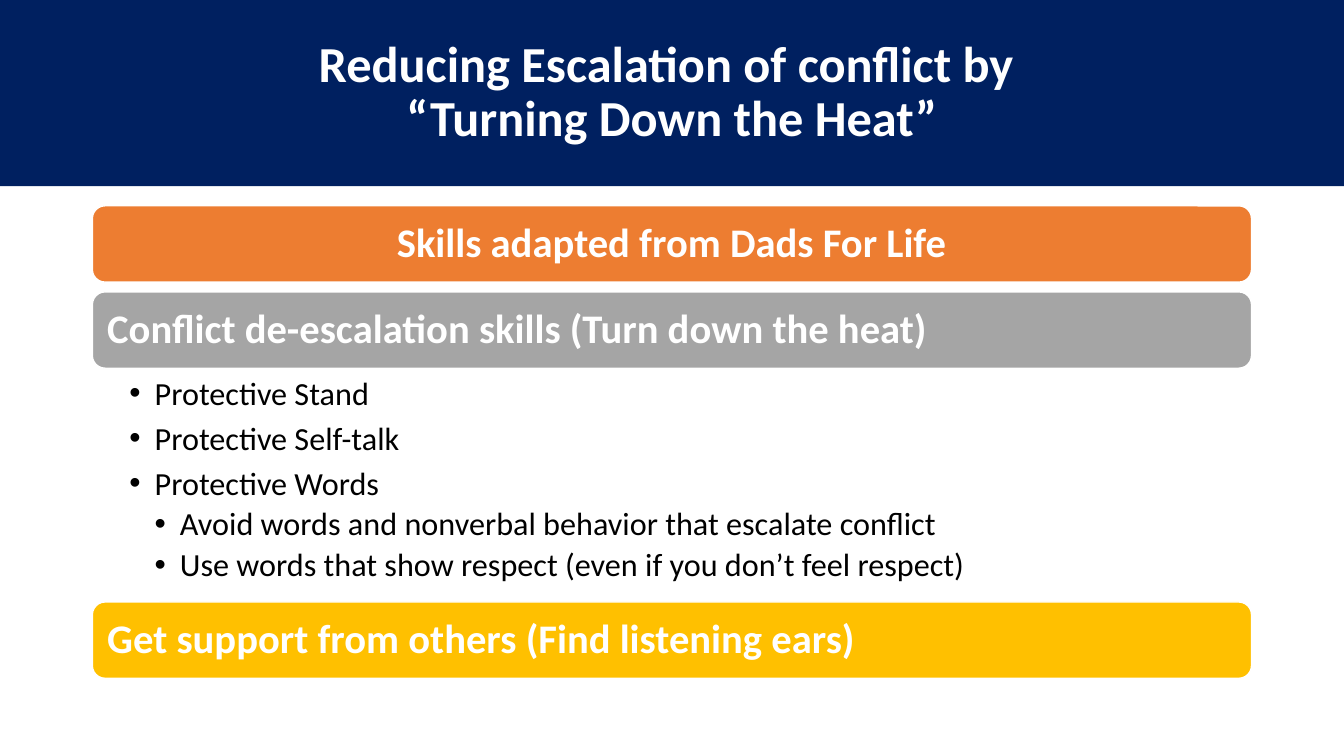
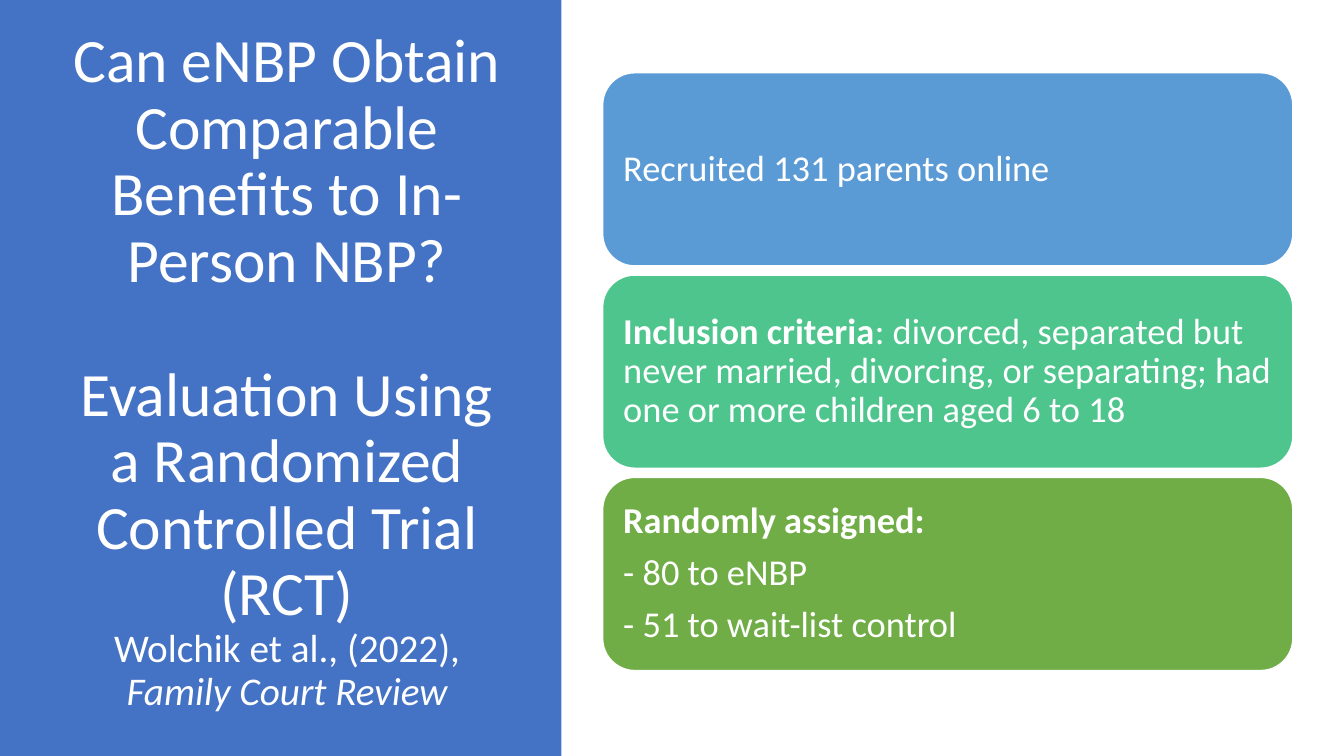
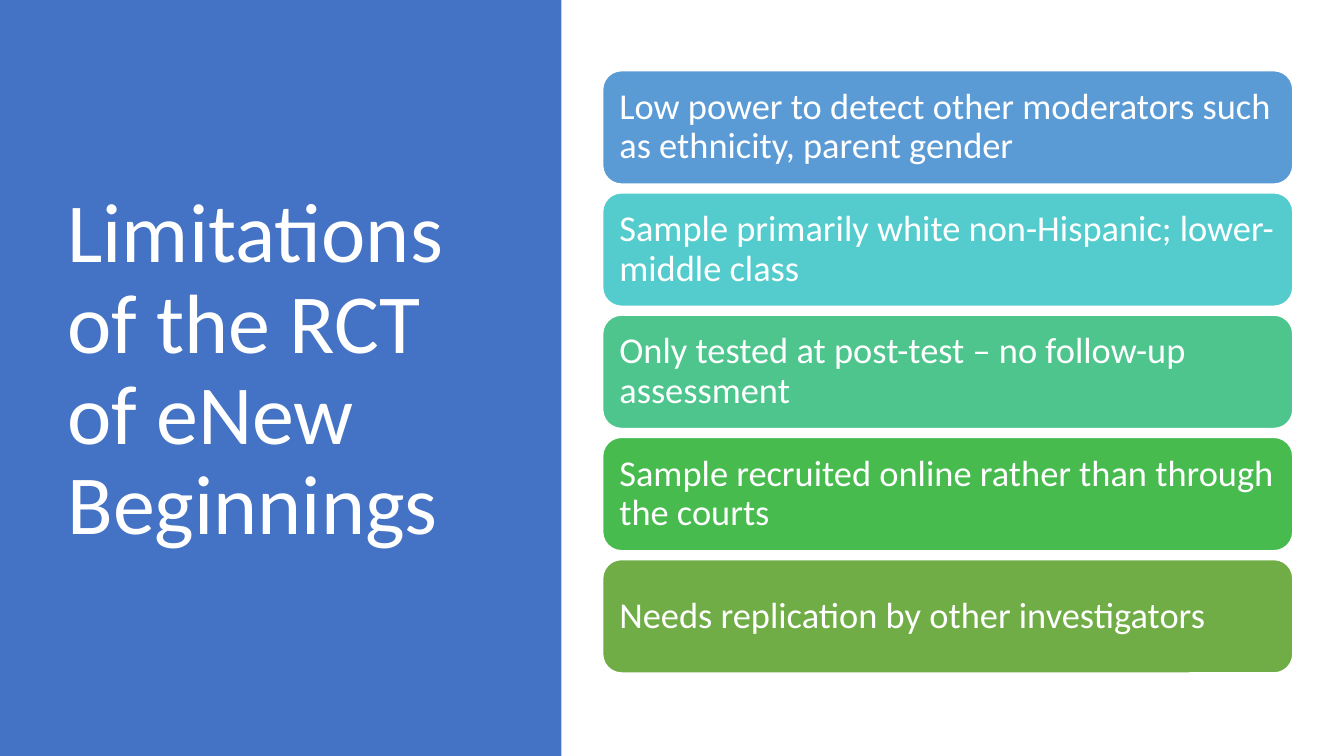
"""Build three slides on conflict skills and the eNBP trial."""
from pptx import Presentation
from pptx.dml.color import RGBColor
from pptx.enum import shapes, text
from pptx.oxml.ns import qn
from pptx.util import Pt
from lxml import etree

C = {"white": "FFFFFF", "black": "000000", "navy": "002060", "panel": "4472C4",
     "orange": "ED7D31", "gray": "A5A5A5", "gold": "FFC000", "blue": "5B9BD5",
     "teal": "54CCCD", "mint": "4DC58D", "green": "48BB4F", "olive": "70AD47"}
FONT = "Calibri"
LEFT, CENTER = text.PP_ALIGN.LEFT, text.PP_ALIGN.CENTER


def add_text(tf, runs, size, color="white", bold=False, align=LEFT, spacing=0.9,
             before=0, after=0, bullet_level=None):
    """Add a paragraph of (text, font overrides) runs; a newline is a line break."""
    p = tf.paragraphs[0]
    if p.runs:
        p = tf.add_paragraph()
    if bullet_level is not None:
        p.level = bullet_level
        pPr = p._p.get_or_add_pPr()
        pPr.set("marL", str(Pt(18 * (bullet_level + 1))))
        pPr.set("indent", str(Pt(-18)))
        etree.SubElement(pPr, qn("a:buChar")).set("char", "•")
    p.alignment, p.line_spacing = align, spacing
    p.space_before, p.space_after = Pt(before), Pt(after)
    for words, fmt in ([(runs, {})] if isinstance(runs, str) else runs):
        for i, line in enumerate(words.split("\n")):
            if i:
                p.add_line_break()
            r = p.add_run()
            r.text = line
            r.font.name = FONT
            r.font.size = Pt(fmt.get("size", size))
            r.font.bold = fmt.get("bold", bold)
            r.font.italic = fmt.get("italic", False)
            r.font.color.rgb = RGBColor.from_string(C[color])


def add_box(s, kind, fill, x, y, w, h, line=None):
    """Add a filled shape whose text sits in the vertical middle."""
    sp = s.shapes.add_shape(kind, Pt(x), Pt(y), Pt(w), Pt(h))
    sp.shadow.inherit = False
    sp.fill.solid()
    sp.fill.fore_color.rgb = RGBColor.from_string(C[fill])
    if line:
        sp.line.color.rgb = RGBColor.from_string(C[line])
        sp.line.width = Pt(1)
    else:
        sp.line.fill.background()
    tf = sp.text_frame
    tf.word_wrap = True
    tf.vertical_anchor = text.MSO_ANCHOR.MIDDLE
    tf.margin_left = tf.margin_right = tf.margin_top = tf.margin_bottom = Pt(8)
    return sp


RECT = shapes.MSO_SHAPE.RECTANGLE
ROUND = shapes.MSO_SHAPE.ROUNDED_RECTANGLE
prs = Presentation()
prs.slide_width, prs.slide_height = Pt(960), Pt(540)

s = prs.slides.add_slide(prs.slide_layouts[1])
title, body = s.shapes.title, s.placeholders[1]
title.left, title.top, title.width, title.height = Pt(0), Pt(0), Pt(960), Pt(133)
title.fill.solid()
title.fill.fore_color.rgb = RGBColor.from_string(C["navy"])
title.text_frame.auto_size = text.MSO_AUTO_SIZE.NONE
title.text_frame.vertical_anchor = text.MSO_ANCHOR.MIDDLE
add_text(title.text_frame, "Reducing Escalation of conflict by \n“Turning Down the Heat”",
         36, bold=True, align=CENTER)

bars = [(147, "orange", CENTER, "Skills adapted from Dads For Life"),
        (208.5, "gray", LEFT, "Conflict de-escalation skills (Turn down the heat)"),
        (430, "gold", LEFT, "Get support from others (Find listening ears)")]
for y, fill, align, words in bars:
    sp = add_box(s, ROUND, fill, 66, y, 828, 54.5, line="white")
    add_text(sp.text_frame, words, 29, bold=True, align=align)

body.left, body.top, body.width, body.height = Pt(66), Pt(263.5), Pt(828), Pt(165.5)
tf = body.text_frame
tf.auto_size = text.MSO_AUTO_SIZE.NONE
tf.margin_left, tf.margin_right = Pt(26.5), Pt(16.5)
tf.margin_top = tf.margin_bottom = Pt(3)
skills = [(0, "Protective Stand"),
          (0, "Protective Self-talk"),
          (0, "Protective Words"),
          (1, "Avoid words and nonverbal behavior that escalate conflict"),
          (1, "Use words that show respect (even if you don’t feel respect)")]
for level, words in skills:
    add_text(tf, words, 23, color="black", spacing=0.9 if level else 1.0,
             after=4.5, bullet_level=level)

bold = {"bold": True}
panel_slides = [
    {"title": [("Can eNBP Obtain Comparable Benefits to In-Person NBP?", 0),
               ([("Evaluation Using a Randomized\nControlled Trial (RCT)\n", {}),
                 ("Wolchik et al., (2022),\n", {"size": 28}),
                 ("Family Court Review", {"size": 28, "italic": True})], 48)],
     "size": 44, "align": CENTER, "width": 328, "top": 52, "height": 138, "pitch": 144.5,
     "cards": [
         ("blue", ["Recruited 131 parents online"]),
         ("mint", [[("Inclusion criteria", bold),
                    (": divorced, separated but never married, divorcing, or separating; "
                     "had one or more children aged 6 to 18", {})]]),
         ("olive", [[("Randomly assigned:", bold)],
                    "- 80 to eNBP", "- 51 to wait-list control"])]},
    {"title": [("Limitations of the RCT of eNew Beginnings", 0)],
     "size": 60, "align": LEFT, "width": 300, "top": 50.5, "height": 81, "pitch": 87.3,
     "cards": [
         ("blue", ["Low power to detect other moderators such as ethnicity, parent gender"]),
         ("teal", ["Sample primarily white non-Hispanic; lower-middle class"]),
         ("mint", ["Only tested at post-test – no follow-up assessment"]),
         ("green", ["Sample recruited online rather than through the courts"]),
         ("olive", ["Needs replication by other investigators"])]}]

for d in panel_slides:
    s = prs.slides.add_slide(prs.slide_layouts[5])
    title = s.shapes.title
    panel = add_box(s, RECT, "panel", 0, 0, 401, 540)
    title.element.addprevious(panel.element)
    title.left, title.top, title.width, title.height = Pt(41), Pt(49), Pt(d["width"]), Pt(433)
    title.text_frame.auto_size = text.MSO_AUTO_SIZE.NONE
    title.text_frame.vertical_anchor = text.MSO_ANCHOR.MIDDLE
    for runs, before in d["title"]:
        add_text(title.text_frame, runs, d["size"], align=d["align"], before=before)
    for i, (fill, paragraphs) in enumerate(d["cards"]):
        sp = add_box(s, ROUND, fill, 430.5, d["top"] + i * d["pitch"], 493, d["height"],
                     line="white")
        for j, runs in enumerate(paragraphs):
            add_text(sp.text_frame, runs, 26, before=9 if j else 0)

prs.save("out.pptx")
